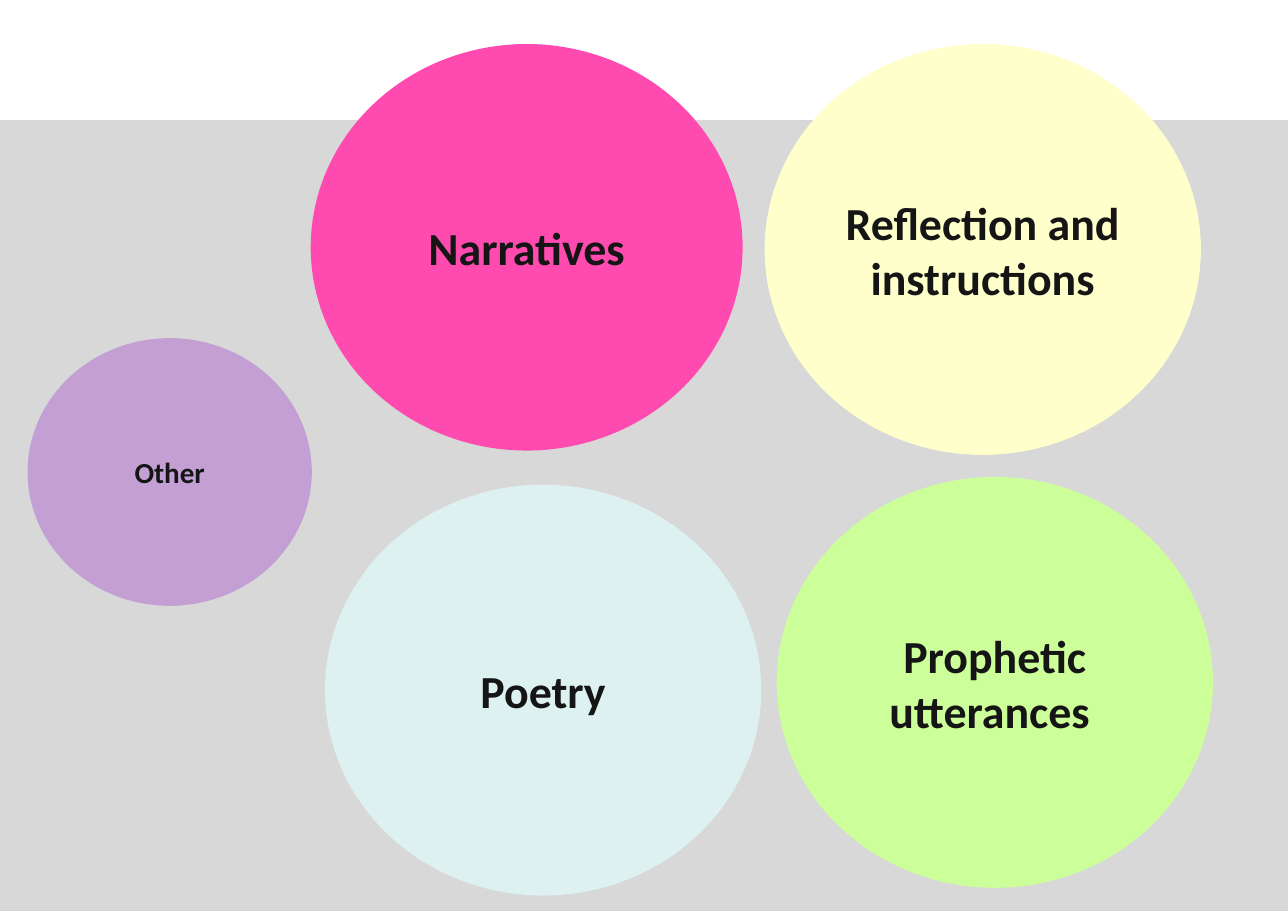
from pptx import Presentation
from pptx import util as u
from pptx.dml.color import RGBColor
from pptx.enum import shapes, text

COLOURS = {
    "band": "D8D8D8",
    "ink": "151515",
    "narratives": "FF4AAF",
    "reflection": "FFFFCC",
    "prophetic": "CCFF99",
    "poetry": "DEF1F1",
    "other": "C49FD3",
}
GENRES = [
    ("Narratives", "narratives", (2.82, 0.4, 3.92, 3.69), 30),
    ("Reflection and instructions", "reflection", (6.94, 0.4, 3.96, 3.73), 30),
    ("Prophetic utterances ", "prophetic", (7.05, 4.33, 3.96, 3.73), 30),
    ("Poetry", "poetry", (2.95, 4.4, 3.96, 3.73), 30),
    ("Other", "other", (0.25, 3.07, 2.58, 2.43), 19),
]


class GenrePage:
    """Holds the style and the current slide, and draws its elements."""

    font_name = "Calibri"

    def __init__(self, page):
        self.page = page

    def plain_shape(self, kind, place, colour):
        """Add a filled shape without line or shadow."""
        shape = self.page.shapes.add_shape(kind, *map(u.Inches, place))
        shape.shadow.inherit = False
        shape.fill.solid()
        shape.fill.fore_color.rgb = RGBColor.from_string(COLOURS[colour])
        shape.line.fill.background()
        return shape

    def band(self, place):
        """Add the grey background band."""
        self.plain_shape(shapes.MSO_SHAPE.RECTANGLE, place, "band")

    def bubble(self, label, colour, place, size):
        """Add an ellipse with a centred bold label."""
        box = self.plain_shape(shapes.MSO_SHAPE.OVAL, place, colour).text_frame
        box.word_wrap = True
        box.vertical_anchor = text.MSO_ANCHOR.MIDDLE
        box.margin_left = box.margin_right = u.Inches(0.11)
        box.margin_top = box.margin_bottom = u.Inches(0.06)
        para = box.paragraphs[0]
        para.text = label
        para.alignment = text.PP_ALIGN.CENTER
        para.font.name = self.font_name
        para.font.size = u.Pt(size)
        para.font.bold = True
        para.font.color.rgb = RGBColor.from_string(COLOURS["ink"])


def main():
    """Build and save the slide."""
    deck = Presentation()
    deck.slide_width, deck.slide_height = u.Inches(11.69), u.Inches(8.27)
    page = GenrePage(deck.slides.add_slide(deck.slide_layouts[6]))
    page.band((0, 1.09, 11.69, 7.18))
    for genre in GENRES:
        page.bubble(*genre)
    deck.save("out.pptx")


if __name__ == "__main__":
    main()
